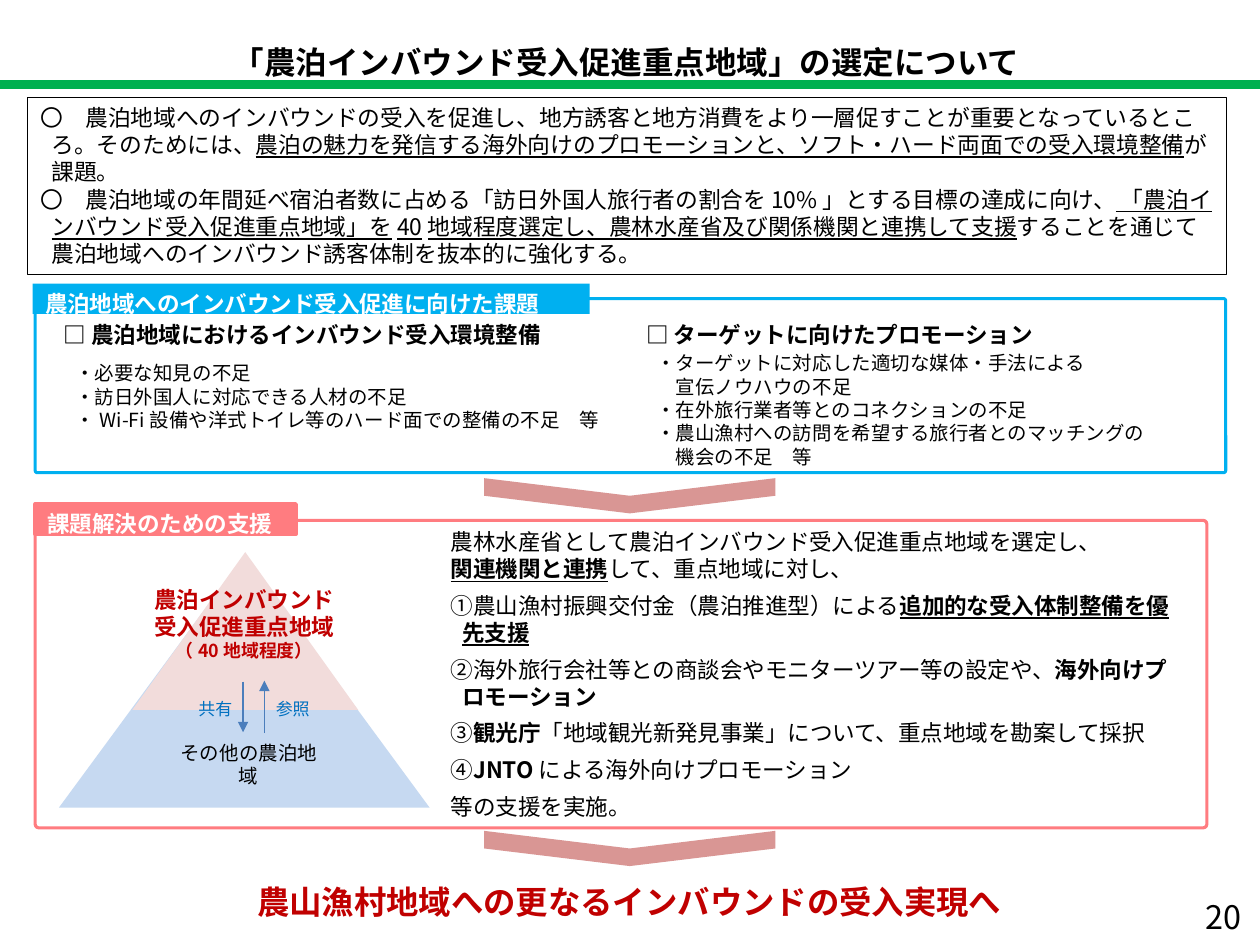
from lxml.etree import SubElement as Sub
from pptx import Presentation
from pptx.dml.color import RGBColor
from pptx.enum.shapes import MSO_CONNECTOR as Conn, MSO_SHAPE as Kind
from pptx.enum.text import MSO_ANCHOR as Anchor, PP_ALIGN as Align
from pptx.oxml.ns import qn
from pptx.util import Cm, Pt

SANS = "Noto Sans CJK JP"
BLACK, WHITE, RED = "000000", "FFFFFF", "C00000"
SKY, PINK, ROSE, BLUE = "00B0F0", "FF7C80", "D99694", "0070C0"
MID, LEFT, RIGHT = Align.CENTER, Align.LEFT, Align.RIGHT


def paint(color, code):
    """Set a colour format from a hex string."""
    color.rgb = RGBColor.from_string(code)


def style(run, size, code, marks, font):
    """Format one run; marks may hold b for bold and u for underline."""
    face = run.font
    face.size, face.name = Pt(size), font
    face.bold, face.underline = "b" in marks, "u" in marks
    paint(face.color, code)
    Sub(run._r.get_or_add_rPr(), qn("a:ea"), typeface=font)


def write(shape, paras, size, code=BLACK, marks="", font=SANS, align=LEFT,
          hang=0, gap=0, first=0, anchor=Anchor.TOP):
    """Fill a shape with paragraphs; hang and gap apply from paragraph first on."""
    frame = shape.text_frame
    frame.word_wrap, frame.vertical_anchor = True, anchor
    for i, parts in enumerate(paras):
        para = frame.paragraphs[0] if i == 0 else frame.add_paragraph()
        para.alignment = align
        if i >= first:
            props = para._p.get_or_add_pPr()
            props.set("marL", str(Cm(hang)))
            props.set("indent", str(-Cm(hang)))
            if i and gap:
                para.space_before = Pt(gap)
        for part in [parts] if isinstance(parts, str) else parts:
            text, extra = (part, marks) if isinstance(part, str) else part
            run = para.add_run()
            run.text = text
            style(run, size, code, extra, font)
    return frame


def label(slide, box, paras, size, **opts):
    """Add a text box."""
    return write(slide.shapes.add_textbox(*map(Cm, box)), paras, size, **opts)


def block(slide, kind, box, fill=None, line=None, width=1, turn=0):
    """Add a preset shape with optional fill and outline."""
    shape = slide.shapes.add_shape(kind, *map(Cm, box))
    shape.shadow.inherit = False
    shape.rotation = turn
    if fill:
        shape.fill.solid()
        paint(shape.fill.fore_color, fill)
    else:
        shape.fill.background()
    if line:
        paint(shape.line.color, line)
        shape.line.width = Pt(width)
    else:
        shape.line.fill.background()
    return shape


def panel(slide, box, code):
    """Add an outlined panel with slightly rounded corners."""
    block(slide, Kind.ROUNDED_RECTANGLE, box, line=code, width=1.75).adjustments[0] = 0.012


def rule(slide, ends, code, width, arrow=False):
    """Add a straight line, with an arrowhead at its end if asked."""
    line = slide.shapes.add_connector(Conn.STRAIGHT, *map(Cm, ends))
    paint(line.line.color, code)
    line.line.width = Pt(width)
    if arrow:
        Sub(line.line._get_or_add_ln(), qn("a:tailEnd"), type="triangle")
    Sub(line._element.spPr, qn("a:effectLst"))


def head(slide):
    """Add the title, its rule and the summary box."""
    frame = label(slide, (0.76, 0.74, 23.72, 0.97),
                  ["「農泊インバウンド受入促進重点地域」の選定について"], 18, marks="b", align=MID)
    frame.margin_left = frame.margin_right = Cm(0.18)
    frame.margin_bottom = Cm(0.05)
    rule(slide, (0, 1.7, 25.4, 1.7), "00B050", 5)
    box = block(slide, Kind.RECTANGLE, (0.56, 1.96, 24.16, 3.58), line=BLACK, width=0.75)
    write(box, [
        ["〇　農泊地域へのインバウンドの受入を促進し、地方誘客と地方消費をより一層促すことが重要となっているところ。そのためには、",
         ("農泊の魅力を発信する海外向けのプロモーションと、ソフト・ハード両面での受入環境整備", "u"), "が課題。"],
        ["〇　農泊地域の年間延べ宿泊者数に占める「訪日外国人旅行者の割合を10%」とする目標の達成に向け、",
         (" 「農泊インバウンド受入促進重点地域」を40地域程度選定し、農林水産省及び関係機関と連携して支援", "u"),
         "することを通じて農泊地域へのインバウンド誘客体制を抜本的に強化する。"],
    ], 13, hang=0.23)


def issues(slide):
    """Add the panel of issues."""
    panel(slide, (0.71, 6.02, 24, 3.51), SKY)
    tab = block(slide, Kind.RECTANGLE, (0.66, 5.72, 11.23, 0.61), SKY)
    write(tab, ["農泊地域へのインバウンド受入促進に向けた課題"], 12.9, WHITE, "b")
    for box, text in (
        ((1.04, 6.35, 11.94, 0.81), "□ 農泊地域におけるインバウンド受入環境整備"),
        ((12.78, 6.35, 11.71, 0.81), "□ ターゲットに向けたプロモーション"),
    ):
        label(slide, box, [text], 12.9, marks="b", hang=0.46)
    for box, items in (
        ((1.27, 7.16, 11.23, 1.68),
         ["・必要な知見の不足", "・訪日外国人に対応できる人材の不足",
          "・Wi-Fi設備や洋式トイレ等のハード面での整備の不足　等"]),
        ((12.98, 6.96, 10.72, 2.62),
         ["・ターゲットに対応した適切な媒体・手法による", "　宣伝ノウハウの不足",
          "・在外旅行業者等とのコネクションの不足",
          "・農山漁村への訪問を希望する旅行者とのマッチングの", "　機会の不足　等"]),
    ):
        label(slide, box, items, 11.1, hang=0.23)


def tiers(slide):
    """Add the two-tier pyramid with its labels and arrows."""
    block(slide, Kind.ISOSCELES_TRIANGLE, (1.19, 11.2, 7.47, 5.08), "C6D9F1")
    block(slide, Kind.ISOSCELES_TRIANGLE, (2.67, 11.13, 4.55, 3.18), "F2DCDB")
    frame = label(slide, (1.47, 11.89, 6.91, 1.35),
                  ["農泊インバウンド", "受入促進重点地域", "（40地域程度）"], 12.9,
                  code=RED, marks="b", align=MID, anchor=Anchor.MIDDLE)
    frame.paragraphs[-1].runs[0].font.size = Pt(10.2)
    rule(slide, (5.33, 14.78, 5.33, 13.72), "4B7EBC", 1, True)
    rule(slide, (4.9, 13.74, 4.9, 14.76), "4B7EBC", 1, True)
    for left, text, align in ((5.31, "参照", LEFT), (3.61, "共有", MID)):
        label(slide, (left, 13.94, 1.47, 0.69), [text], 9.7, code=BLUE,
              font="Calibri", align=align, anchor=Anchor.MIDDLE)
    label(slide, (3.25, 14.73, 3.53, 1.35), ["その他の農泊地域"], 11.1,
          font="Calibri", align=MID, anchor=Anchor.MIDDLE)


def support(slide):
    """Add the panel of support measures."""
    tiers(slide)
    label(slide, (8.84, 10.52, 15.34, 6.3), [
        "農林水産省として農泊インバウンド受入促進重点地域を選定し、",
        [("関連機関と連携", "bu"), "して、重点地域に対し、"],
        ["①農山漁村振興交付金（農泊推進型）による", ("追加的な受入体制整備を優先支援", "bu")],
        ["②海外旅行会社等との商談会やモニターツアー等の設定や、", ("海外向けプロモーション", "b")],
        ["③", ("観光庁", "b"), "「地域観光新発見事業」について、重点地域を勘案して採択"],
        ["④", ("JNTO", "b"), "による海外向けプロモーション"],
        "等の支援を実施。",
    ], 12.9, hang=0.23, gap=5.5, first=2)
    panel(slide, (0.71, 10.49, 23.62, 6.2), PINK)
    tab = block(slide, Kind.RECTANGLE, (0.71, 10.16, 5.26, 0.61), PINK, PINK, 2)
    write(tab, ["課題解決のための支援"], 12.9, WHITE, "b")


def main():
    """Build the slide and save it."""
    deck = Presentation()
    deck.slide_width, deck.slide_height = Cm(25.4), Cm(19.05)
    slide = deck.slides.add_slide(deck.slide_layouts[6])
    head(slide)
    issues(slide)
    support(slide)
    for top in (7.06, 14.17):
        block(slide, Kind.CHEVRON, (12.34, top, 0.71, 5.87), ROSE, turn=90)
    label(slide, (4.55, 17.65, 16.26, 1.04), ["農山漁村地域への更なるインバウンドの受入実現へ"],
          18.5, code=RED, marks="b", align=MID)
    label(slide, (19.56, 17.96, 5.72, 0.94), ["20"], 18.5, align=RIGHT)
    deck.save("out.pptx")


if __name__ == "__main__":
    main()
